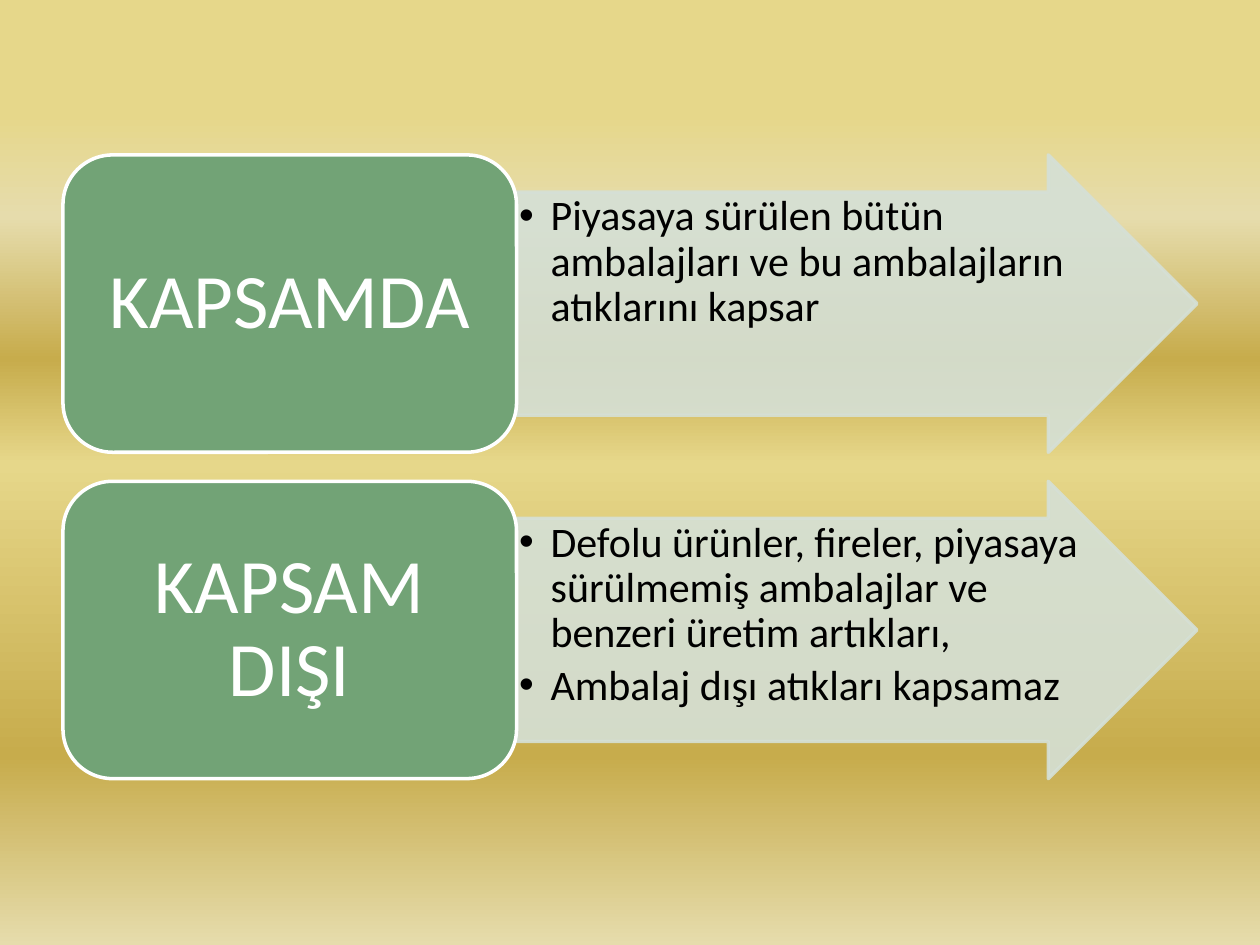
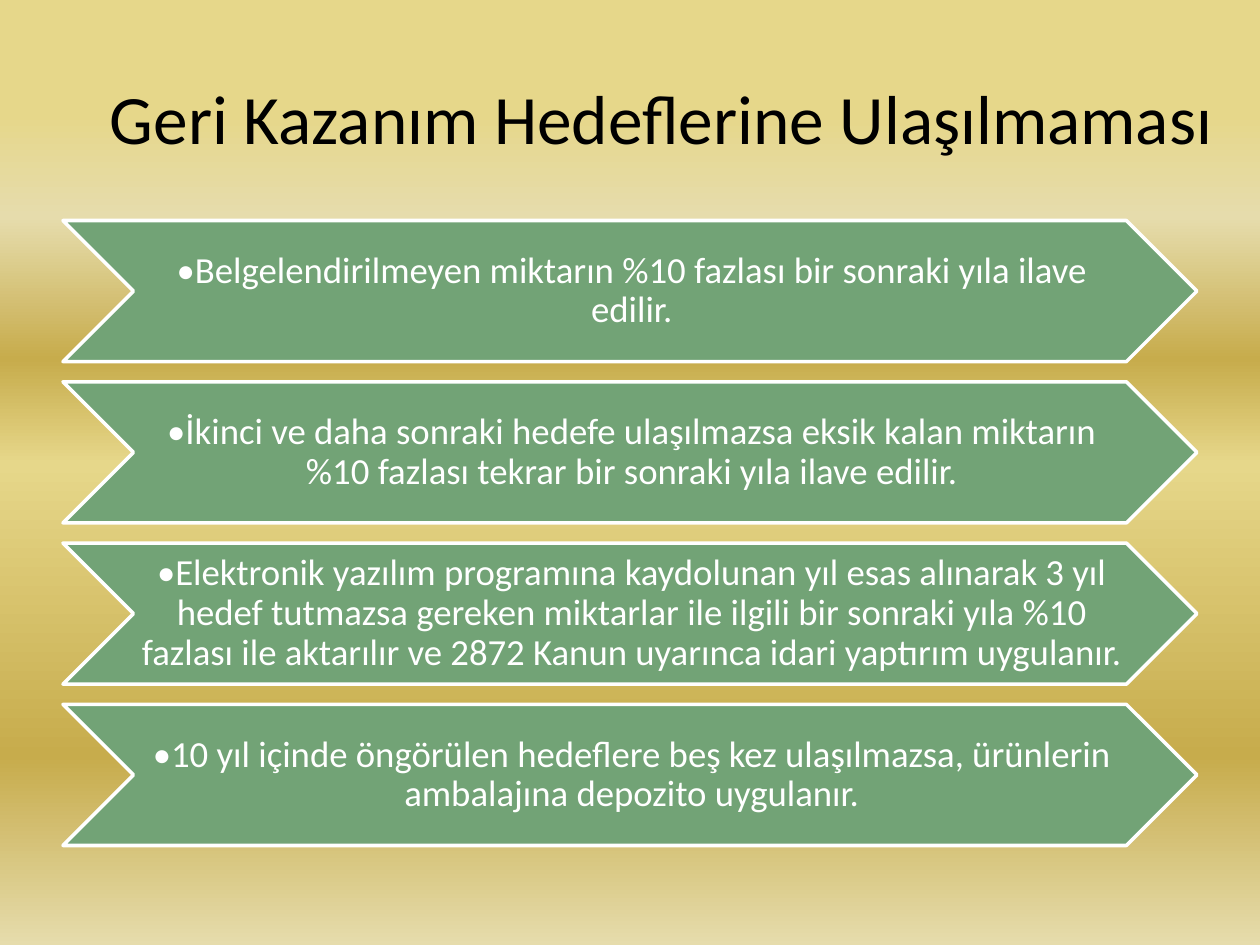
from lxml.etree import SubElement as Sub
from pptx import Presentation
from pptx.dml.color import RGBColor as Color
from pptx.enum.shapes import MSO_SHAPE as Form
from pptx.enum.text import MSO_ANCHOR as Anchor, PP_ALIGN as Align
from pptx.oxml.ns import qn
from pptx.util import Inches, Pt

GREEN = Color(0x72, 0xA3, 0x76)
PALE = Color(0xD5, 0xE0, 0xD6)
WHITE = Color(0xFF, 0xFF, 0xFF)
BLACK = Color(0x00, 0x00, 0x00)
GOLD = Color(0xE6, 0xD7, 0x8A)
SAND = Color(0xE6, 0xDC, 0xAC)
OCHRE = Color(0xC7, 0xAC, 0x4C)
STOPS = [(12, GOLD), (23, SAND), (38, OCHRE), (49, GOLD), (80, OCHRE), (100, SAND)]
LEFT = 0.5

SCOPE = [
    ("KAPSAMDA", ["Piyasaya sürülen bütün ambalajları ve bu ambalajların atıklarını kapsar"]),
    ("KAPSAM DIŞI", [
        "Defolu ürünler, fireler, piyasaya sürülmemiş ambalajlar ve benzeri üretim artıkları,",
        "Ambalaj dışı atıkları kapsamaz",
    ]),
]
RULES = [
    "•Belgelendirilmeyen miktarın %10 fazlası bir sonraki yıla ilave edilir.",
    "•İkinci ve daha sonraki hedefe ulaşılmazsa eksik kalan miktarın %10 fazlası "
    "tekrar bir sonraki yıla ilave edilir.",
    "•Elektronik yazılım programına kaydolunan yıl esas alınarak 3 yıl hedef tutmazsa "
    "gereken miktarlar ile ilgili bir sonraki yıla %10 fazlası ile aktarılır ve "
    "2872 Kanun uyarınca idari yaptırım uygulanır.",
    "•10 yıl içinde öngörülen hedeflere beş kez ulaşılmazsa, ürünlerin ambalajına "
    "depozito uygulanır.",
]


class Deck:
    """Holds the deck style and the current slide."""

    def __init__(self):
        self.prs = Presentation()
        self.prs.slide_width, self.prs.slide_height = Inches(10), Inches(7.5)
        self.slide = None

    def page(self):
        self.slide = self.prs.slides.add_slide(self.prs.slide_layouts[6])
        fill = self.slide.background.fill
        fill.gradient()
        fill.gradient_angle = 270
        stops = self.slide.element.find(".//" + qn("a:gsLst"))
        for stop in list(stops):
            stops.remove(stop)
        for pos, color in STOPS:
            stop = Sub(stops, qn("a:gs"), pos=str(pos * 1000))
            Sub(stop, qn("a:srgbClr"), val=str(color))

    def label(self, shape, lines, size, color, pads, align=Align.CENTER,
              anchor=Anchor.MIDDLE, space=0.9):
        frame = shape.text_frame
        sides = ("margin_left", "margin_top", "margin_right", "margin_bottom")
        look = dict(zip(sides, map(Inches, pads)), word_wrap=True, vertical_anchor=anchor)
        for key, val in look.items():
            setattr(frame, key, val)
        frame.text = "\n".join(lines)
        for para in frame.paragraphs:
            para.alignment, para.line_spacing = align, space
            for key, val in {"name": "Calibri", "size": Pt(size)}.items():
                setattr(para.font, key, val)
            para.font.color.rgb = color
        return frame.paragraphs

    def title(self, text):
        box = self.slide.shapes.add_textbox(
            Inches(LEFT), Inches(0.3), Inches(9.5), Inches(1.25))
        self.label(box, [text], 39.6, BLACK, (0.1, 0.05, 0.1, 0.05), space=1.0)

    def shape(self, form, x, y, w, h, fill, line):
        shape = self.slide.shapes.add_shape(form, *map(Inches, (x, y, w, h)))
        shape.shadow.inherit = False
        shape.fill.solid()
        shape.fill.fore_color.rgb = fill
        shape.line.color.rgb = line
        shape.line.width = Pt(2)
        return shape

    def arrow(self, x, y, w, h, lines):
        shape = self.shape(Form.RIGHT_ARROW, x, y, w, h, PALE, PALE)
        shape.adjustments[0] = 0.75
        for tint in shape.element.spPr.iter(qn("a:srgbClr")):
            Sub(tint, qn("a:alpha"), val="90000")
        for para in self.label(shape, lines, 24, BLACK, [0.02] * 4, Align.LEFT, Anchor.TOP):
            para.space_after = Pt(4)
            props = para._p.get_or_add_pPr()
            props.set("marL", str(Inches(0.25)))
            props.set("indent", str(Inches(-0.25)))
            Sub(props, qn("a:buFont"), typeface="Arial")
            Sub(props, qn("a:buChar"), char="•")
            props.append(props.find(qn("a:defRPr")))

    def card(self, x, y, w, h, text):
        shape = self.shape(Form.ROUNDED_RECTANGLE, x, y, w, h, GREEN, WHITE)
        self.label(shape, [text], 44, WHITE, (0.18, 0.09, 0.18, 0.09))

    def band(self, x, y, w, h, text):
        shape = self.shape(Form.CHEVRON, x, y, w, h, GREEN, WHITE)
        self.label(shape, [text], 21, WHITE, (0.03, 0.01, 0, 0.01))


def main():
    deck = Deck()
    deck.page()
    for row, (head, lines) in enumerate(SCOPE):
        top = 1.23 + row * 2.59
        deck.arrow(LEFT + 3.6, top, 5.4, 2.36, lines)
        deck.card(LEFT, top, 3.6, 2.36, head)
    deck.page()
    deck.title("Geri Kazanım Hedeflerine Ulaşılmaması")
    for row, rule in enumerate(RULES):
        deck.band(LEFT, 1.75 + row * 1.28, 9, 1.12, rule)
    deck.prs.save("out.pptx")


if __name__ == "__main__":
    main()
